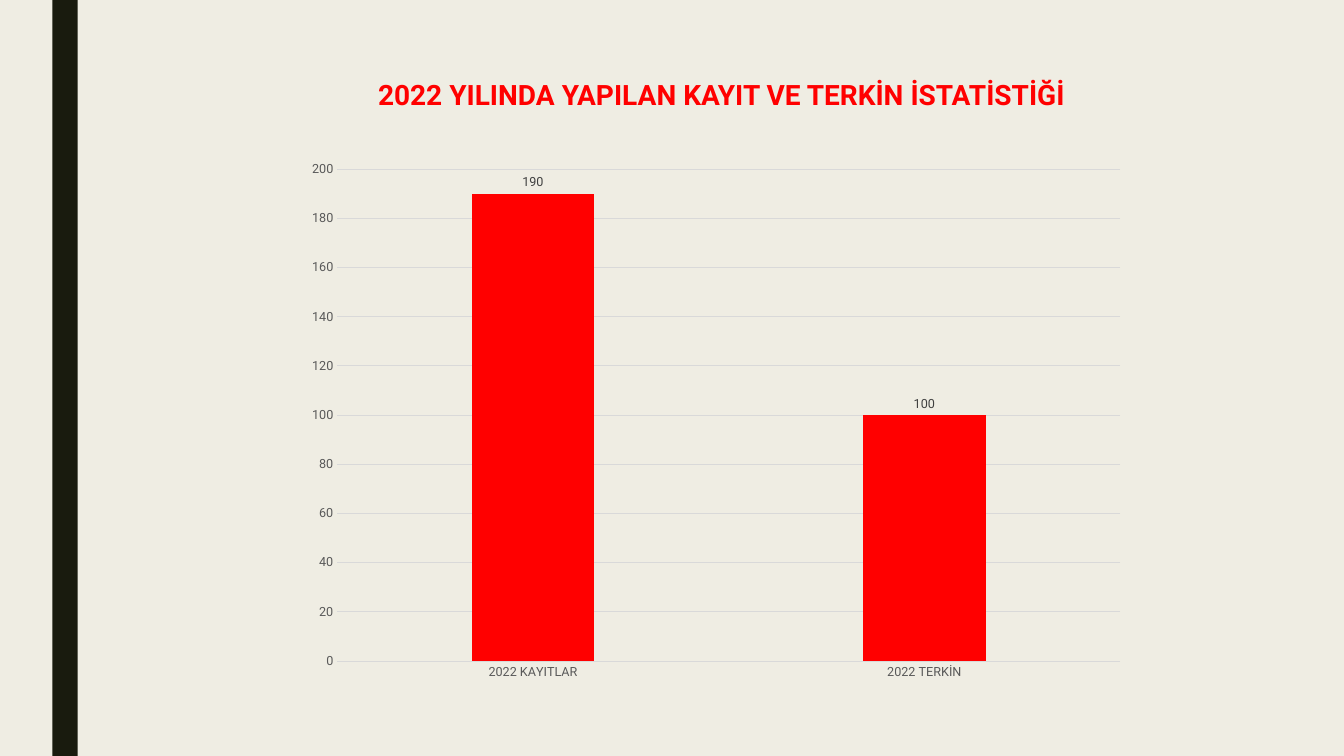
import pptx
import pptx.util
import pptx.chart.data
import pptx.dml.color
import pptx.enum.chart
import pptx.enum.shapes
import pptx.enum.text

Cm, Pt = pptx.util.Cm, pptx.util.Pt
COLORS = {"background": "EFEDE3", "bar": "191B0E", "accent": "FF0000",
          "axis": "595959", "label": "404040", "grid": "D9D9D9"}


def rgb(name):
    return pptx.dml.color.RGBColor.from_string(COLORS[name])


def set_font(font, size, color, bold=False):
    values = {"name": "Roboto", "size": Pt(size), "bold": bold}
    for key, value in values.items():
        setattr(font, key, value)
    font.color.rgb = rgb(color)


prs = pptx.Presentation()
prs.slide_width, prs.slide_height = Cm(33.87), Cm(19.05)
s = prs.slides.add_slide(prs.slide_layouts[5])
s.background.fill.solid()
s.background.fill.fore_color.rgb = rgb("background")

# Side bar
sp = s.shapes.add_shape(pptx.enum.shapes.MSO_SHAPE.RECTANGLE,
                        Cm(1.32), Cm(0), Cm(0.64), prs.slide_height)
sp.shadow.inherit = False
sp.fill.solid()
sp.fill.fore_color.rgb = rgb("bar")
sp.line.fill.background()

# Title
title = s.shapes.title
box = {"left": 9.04, "top": 1.9, "width": 18.29, "height": 1.07}
for key, value in box.items():
    setattr(title, key, Cm(value))
tf = title.text_frame
frame = {"word_wrap": True, "auto_size": pptx.enum.text.MSO_AUTO_SIZE.NONE,
         "vertical_anchor": pptx.enum.text.MSO_ANCHOR.MIDDLE}
for key, value in frame.items():
    setattr(tf, key, value)
p = tf.paragraphs[0]
p.alignment = pptx.enum.text.PP_ALIGN.CENTER
p.line_spacing = 0.89
r = p.add_run()
r.text = "2022 YILINDA YAPILAN KAYIT VE TERKİN İSTATİSTİĞİ"
set_font(r.font, 20, "accent", bold=True)

# Column chart
data = pptx.chart.data.CategoryChartData()
data.categories = ["2022 KAYITLAR", "2022 TERKİN"]
data.add_series("Series 1", [190, 100])
chart = s.shapes.add_chart(pptx.enum.chart.XL_CHART_TYPE.COLUMN_CLUSTERED,
                           Cm(7.44), Cm(3.81), Cm(21.21), Cm(13.59), data).chart
chart.has_title = False
chart.has_legend = False
set_font(chart.font, 10, "axis")

for axis in (chart.category_axis, chart.value_axis):
    axis.major_tick_mark = pptx.enum.chart.XL_TICK_MARK.NONE
    axis.minor_tick_mark = pptx.enum.chart.XL_TICK_MARK.NONE
    set_font(axis.tick_labels.font, 9, "axis")

scale = {"minimum_scale": 0, "maximum_scale": 200, "major_unit": 20,
         "has_major_gridlines": True}
for key, value in scale.items():
    setattr(chart.value_axis, key, value)
chart.value_axis.format.line.fill.background()
for line in (chart.category_axis.format.line,
             chart.value_axis.major_gridlines.format.line):
    line.width = Pt(0.75)
    line.color.rgb = rgb("grid")

plot = chart.plots[0]
for key, value in {"gap_width": 219, "overlap": -27, "vary_by_categories": False}.items():
    setattr(plot, key, value)
series = plot.series[0]
series.format.fill.solid()
series.format.fill.fore_color.rgb = rgb("accent")
labels = series.data_labels
labels.show_value = True
labels.position = pptx.enum.chart.XL_LABEL_POSITION.OUTSIDE_END
set_font(labels.font, 9, "label")

prs.save("out.pptx")
